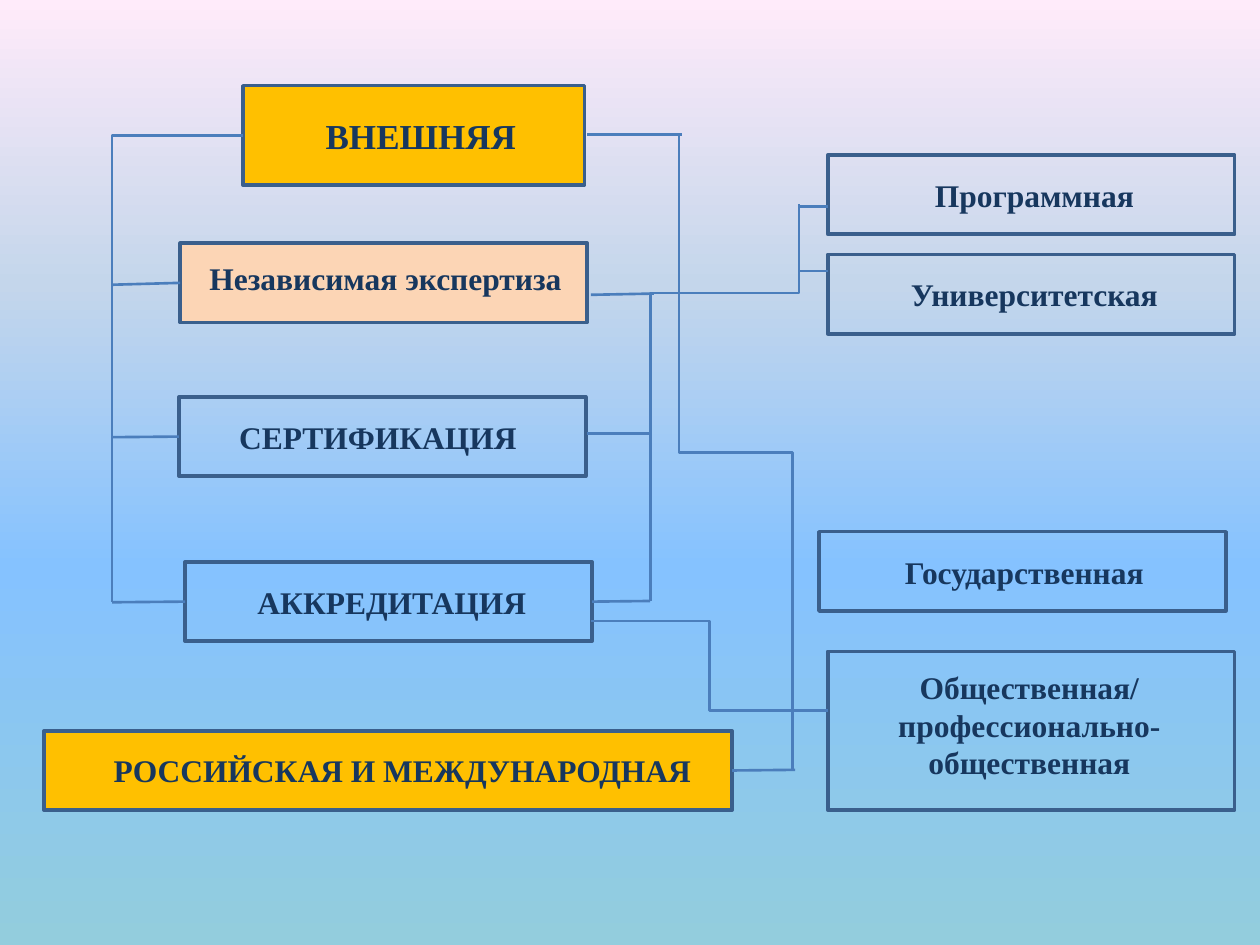
from lxml import etree
from pptx import Presentation
from pptx.dml.color import RGBColor
from pptx.enum.shapes import MSO_CONNECTOR, MSO_SHAPE
from pptx.enum.text import MSO_AUTO_SIZE, PP_ALIGN
from pptx.oxml.ns import qn
from pptx.util import Inches, Pt

RECT = MSO_SHAPE.RECTANGLE
STRAIGHT, ELBOW = MSO_CONNECTOR.STRAIGHT, MSO_CONNECTOR.ELBOW
LEFT, RIGHT = 1, 3
FONT = "Times New Roman"
NAVY, FRAME, WIRE = "17375E", "3A5F8C", "4B7EBC"
GOLD, PEACH = "FFC000", "FCD5B5"
BOX_W, BOX_H = 3.23, 0.63
LABEL_W, LABEL_H = 3.04, 0.4
SKY = [(0, "93CDDD"), (40, "85C2FF"), (70, "C4D6EB"), (100, "FFEBFA")]


def rgb(color):
    return RGBColor.from_string(color)


def paint(sp, color):
    if color:
        sp.fill.solid()
        sp.fill.fore_color.rgb = rgb(color)
    else:
        sp.fill.background()


def background(s, stops):
    """Fill the slide with a gradient that runs from bottom to top."""
    fill = s.background.fill
    fill.gradient()
    fill.gradient_angle = 90
    gs_list = next(s._element.iter(qn("a:gsLst")))
    for gs in list(gs_list):
        gs_list.remove(gs)
    for share, color in stops:
        gs = etree.SubElement(gs_list, qn("a:gs"), pos=str(share * 1000))
        etree.SubElement(gs, qn("a:srgbClr"), val=color)


def box(s, text, x, y, dx, dy, fill=None, size=(BOX_W, BOX_H),
        label=(LABEL_W, LABEL_H), pt=18):
    """Group a frame at x, y with a label offset by dx, dy; return the frame."""
    group = s.shapes.add_group_shape()
    frame = group.shapes.add_shape(RECT, *map(Inches, (x, y, *size)))
    frame.shadow.inherit = False
    paint(frame, fill)
    frame.line.color.rgb = rgb(FRAME)
    frame.line.width = Pt(2)

    tb = group.shapes.add_textbox(*map(Inches, (x + dx, y + dy, *label)))
    paint(tb, fill)
    tf = tb.text_frame
    tf.word_wrap = True
    tf.auto_size = MSO_AUTO_SIZE.SHAPE_TO_FIT_TEXT
    p = tf.paragraphs[0]
    p.text = text
    p.alignment = PP_ALIGN.CENTER
    p.font.name, p.font.size, p.font.bold = FONT, Pt(pt), True
    p.font.color.rgb = rgb(NAVY)
    return frame


def wire(s, start, end, kind=STRAIGHT):
    c = s.shapes.add_connector(kind, *map(Inches, (*start, *end)))
    c.line.color.rgb = rgb(WIRE)
    c.line.width = Pt(1.5)
    etree.SubElement(c._element.spPr, qn("a:effectLst"))
    return c


def corner(s, start, end):
    """Run sideways, then down."""
    c = wire(s, start, end, ELBOW)
    c._element.spPr.find(qn("a:prstGeom")).set("prst", "bentConnector2")
    return c


def step_down(s, start, end, turn=0.5):
    """Run vertically, sideways at the given share, then vertically again."""
    (x1, y1), (x2, y2) = start, end
    cx, cy = (x1 + x2) / 2, (y1 + y2) / 2
    hx, hy = (y2 - y1) / 2, (x1 - x2) / 2  # half run before a quarter turn
    c = wire(s, (cx - hx, cy - hy), (cx + hx, cy + hy), ELBOW)
    sp_pr = c._element.spPr
    sp_pr.find(qn("a:xfrm")).set("rot", str(90 * 60000))
    guides = sp_pr.find(qn("a:prstGeom")).get_or_add_avLst()
    etree.SubElement(guides, qn("a:gd"), name="adj1",
                     fmla=f"val {round(turn * 100000)}")


def left_column(s):
    external = box(s, "ВНЕШНЯЯ", 1.93, 0.68, 0.27, 0.18, GOLD,
                   (2.71, 0.79), (2.28, 0.37), 20)
    expertise = box(s, "Независимая экспертиза", 1.43, 1.93, 0.11, 0.08, PEACH)
    certification = box(s, "СЕРТИФИКАЦИЯ", 1.42, 3.15, 0.06, 0.12)
    accreditation = box(s, "АККРЕДИТАЦИЯ", 1.47, 4.46, 0.12, 0.12)
    scope = box(s, "РОССИЙСКАЯ И МЕЖДУНАРОДНАЯ", 0.35, 5.8, 0.32, 0.11, GOLD,
                (5.46, BOX_H), (5.05, LABEL_H))

    spine = 0.89
    corner(s, (1.93, 1.07), (spine, 4.78)).begin_connect(external, LEFT)
    for sp, y in ((expertise, 2.26), (certification, 3.47), (accreditation, 4.78)):
        wire(s, (spine, y), (1.43, y)).end_connect(sp, LEFT)
    return accreditation, scope


def right_column(s):
    box(s, "Программная", 6.57, 1.23, 0.12, 0.12)
    box(s, "Университетская", 6.57, 2.02, 0.12, 0.11)
    box(s, "Государственная", 6.5, 4.22, 0.11, 0.12)
    box(s, "Общественная/ профессионально-общественная", 6.57, 5.17, 0.08, 0.08,
        size=(BOX_W, 2 * BOX_H), label=(LABEL_W, 1.01))


def cross_links(s, accreditation, scope):
    """Wire the left column to the right one."""
    wire(s, (4.66, 1.07), (5.41, 1.07))
    step_down(s, (5.39, 1.07), (6.29, 6.11))
    wire(s, (5.79, 6.11), (6.31, 6.11)).begin_connect(scope, RIGHT)

    wire(s, (4.69, 2.34), (5.19, 2.33))
    wire(s, (4.66, 3.44), (5.16, 3.44))
    wire(s, (4.7, 4.78), (5.16, 4.77)).begin_connect(accreditation, RIGHT)
    step_down(s, (5.16, 4.77), (6.34, 1.62), 0.776)
    for y in (1.64, 2.15):
        wire(s, (6.34, y), (6.57, y))

    wire(s, (4.69, 4.93), (6.57, 5.64), ELBOW)


def main():
    prs = Presentation()
    prs.slide_width, prs.slide_height = Inches(10), Inches(7.5)
    s = prs.slides.add_slide(prs.slide_layouts[6])
    background(s, SKY)
    accreditation, scope = left_column(s)
    right_column(s)
    cross_links(s, accreditation, scope)
    prs.save("out.pptx")


if __name__ == "__main__":
    main()
